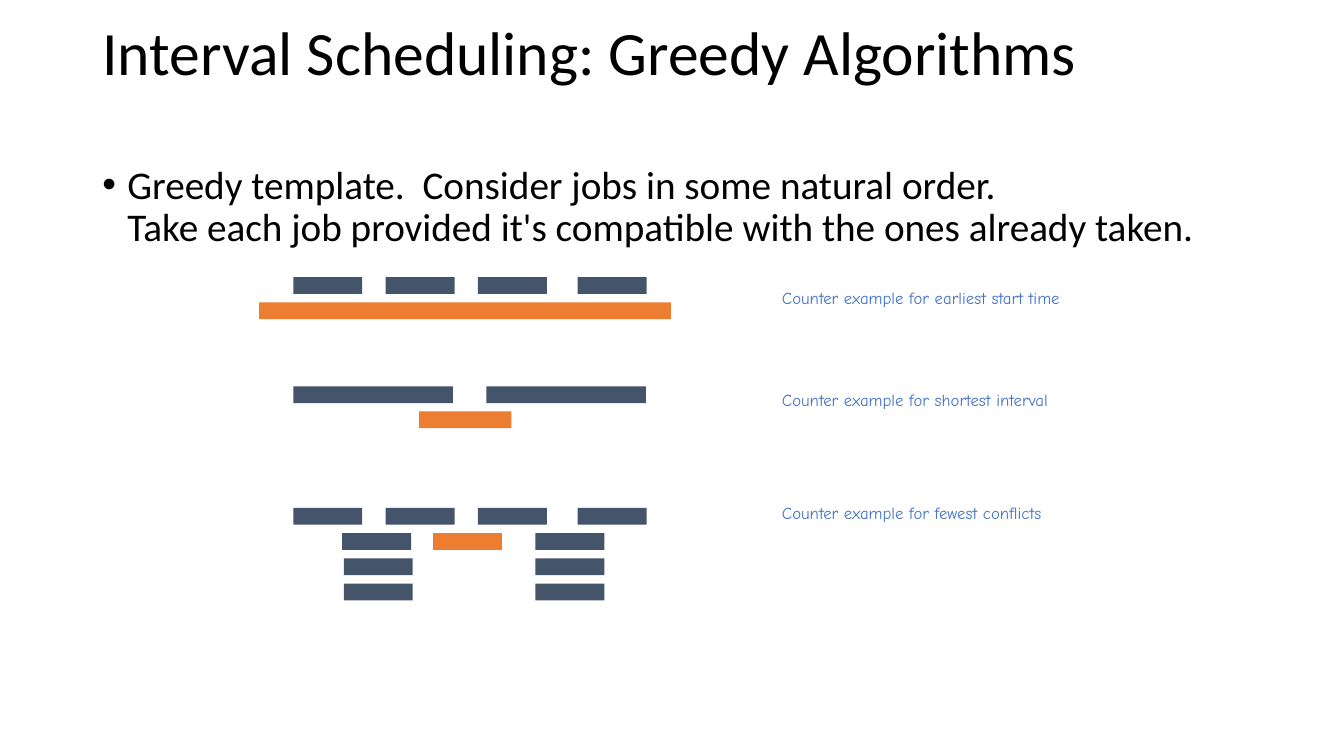
"""Build the slide on counterexamples to greedy interval scheduling."""
import pptx
import pptx.dml.color
import pptx.enum.shapes
import pptx.enum.text
import pptx.util
from lxml import etree

Pt = pptx.util.Pt
COLOURS = {"text": "000000", "job": "44546A", "chosen": "ED7D31", "label": "4472C4"}
JOB_WIDTH, JOB_HEIGHT, ROW_STEP = 49.2, 12, 18
TOP_ROW = [(x, 0, JOB_WIDTH, "job") for x in (24.3, 90.3, 156.2, 227.5)]
SIDE_JOBS = [
    (x, row, JOB_WIDTH, "job")
    for row, left in ((1, 59.3), (2, 60.4), (3, 60.4))
    for x in (left, 197.3)
]
EXAMPLES = [
    (198, 202.3, "earliest start time", TOP_ROW + [(0, 1, 294, "chosen")]),
    (275.9, 275, "shortest interval",
     [(24.3, 0, 114, "job"), (162.2, 0, 114, "job"), (114.2, 1, 66, "chosen")]),
    (362.8, 355.6, "fewest conflicts",
     TOP_ROW + SIDE_JOBS + [(124.2, 1, JOB_WIDTH, "chosen")]),
]


def colour(name):
    """Return the named colour."""
    return pptx.dml.color.RGBColor.from_string(COLOURS[name])


def format_text(paragraph, font_name, size, colour_name):
    """Set the font and left alignment of a paragraph."""
    paragraph.alignment = pptx.enum.text.PP_ALIGN.LEFT
    paragraph.font.name = font_name
    paragraph.font.size = Pt(size)
    paragraph.font.color.rgb = colour(colour_name)


def place_title(slide, left, top, width, height):
    """Fill and place the title placeholder."""
    title = slide.shapes.title
    title.left, title.top, title.width, title.height = map(Pt, (left, top, width, height))
    frame = title.text_frame
    frame.text = "Interval Scheduling: Greedy Algorithms"
    frame.word_wrap = True
    frame.auto_size = pptx.enum.text.MSO_AUTO_SIZE.NONE
    frame.vertical_anchor = pptx.enum.text.MSO_ANCHOR.MIDDLE
    paragraph = frame.paragraphs[0]
    paragraph.line_spacing = 0.9
    format_text(paragraph, "Calibri", 44, "text")


def add_template(slide, left, top, width, height):
    """Add the bulleted statement of the greedy template."""
    frame = slide.shapes.add_textbox(*map(Pt, (left, top, width, height))).text_frame
    frame.word_wrap = True
    paragraph = frame.paragraphs[0]
    paragraph.text = (
        "Greedy template.  Consider jobs in some natural order.\v"
        "Take each job provided it's compatible with the ones already taken."
    )
    paragraph.line_spacing = 0.9
    paragraph.space_before = Pt(10)
    format_text(paragraph, "Calibri", 28, "text")
    properties = paragraph._p.get_or_add_pPr()
    properties.set("marL", str(Pt(18)))
    properties.set("indent", str(-Pt(18)))
    namespace = pptx.oxml.ns.qn("a:buFont"), pptx.oxml.ns.qn("a:buChar")
    bullet_font = etree.Element(namespace[0], typeface="Arial")
    bullet = etree.Element(namespace[1], char="•")
    defaults = properties.find(pptx.oxml.ns.qn("a:defRPr"))
    defaults.addprevious(bullet_font)
    defaults.addprevious(bullet)


def add_example(slide, left, top, label_left, label_top, rule, jobs):
    """Add one group of job bars with its label."""
    group = slide.shapes.add_group_shape()
    for x, row, width, kind in jobs:
        bar = group.shapes.add_shape(
            pptx.enum.shapes.MSO_SHAPE.RECTANGLE,
            Pt(left + x), Pt(top + row * ROW_STEP), Pt(width), Pt(JOB_HEIGHT),
        )
        bar.shadow.inherit = False
        bar.fill.solid()
        bar.fill.fore_color.rgb = colour(kind)
        bar.line.fill.background()
    label = group.shapes.add_textbox(Pt(label_left), Pt(label_top), Pt(238), Pt(21.8))
    label.text_frame.word_wrap = True
    paragraph = label.text_frame.paragraphs[0]
    paragraph.text = f"Counter example for {rule}"
    format_text(paragraph, "Comic Neue", 12, "label")


def main():
    """Build and save the presentation."""
    presentation = pptx.Presentation()
    presentation.slide_width, presentation.slide_height = Pt(960), Pt(540)
    slide = presentation.slides.add_slide(presentation.slide_layouts[5])
    place_title(slide, 66, 11.5, 828, 56)
    add_template(slide, 66, 114.5, 828, 342.7)
    for top, label_top, rule, jobs in EXAMPLES:
        add_example(slide, 185.2, top, 551.5, label_top, rule, jobs)
    presentation.save("out.pptx")


if __name__ == "__main__":
    main()
